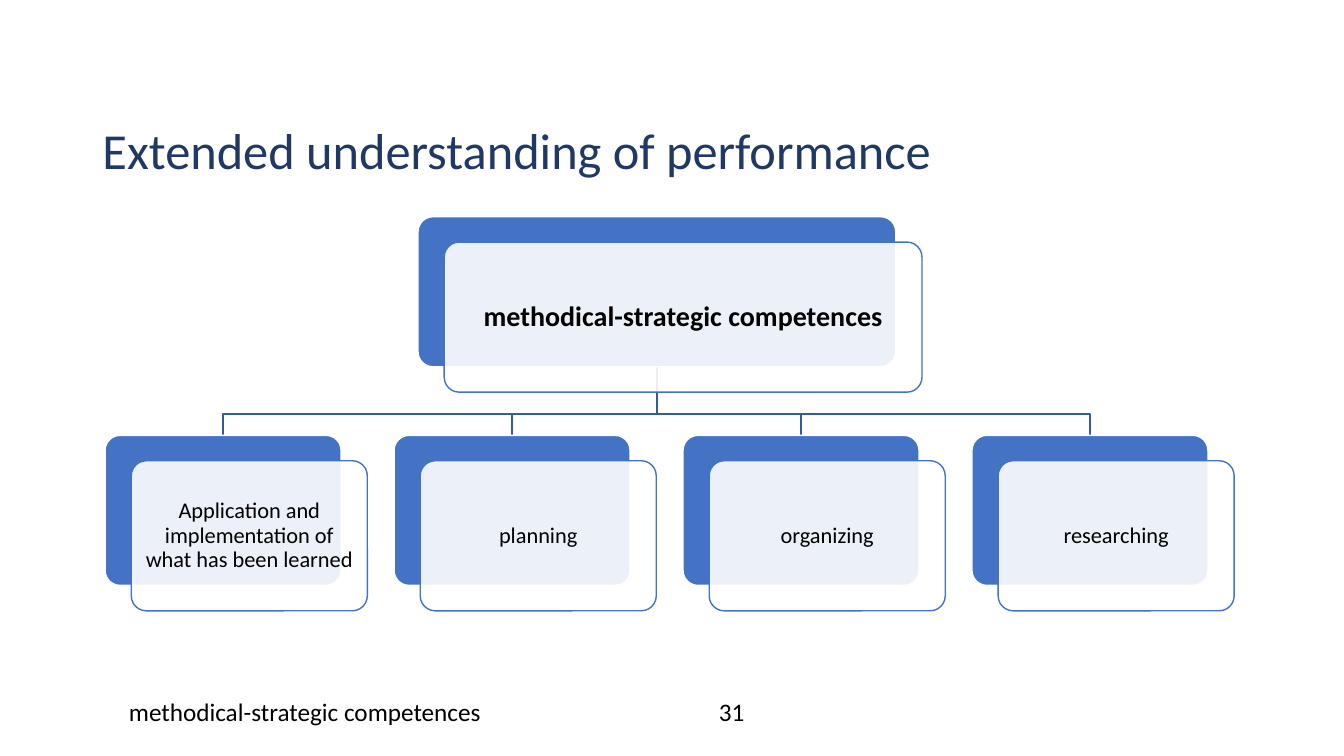
from lxml import etree
from pptx import Presentation
from pptx.dml.color import RGBColor
from pptx.enum import shapes, text
from pptx.oxml import ns
from pptx.util import Pt

COLORS = {"title": "203864", "box": "4472C4", "branch": "365B9D", "white": "FFFFFF", "black": "000000"}


def write(tf, content, size, color, align, bold=False):
    tf.word_wrap = True
    p = tf.paragraphs[0]
    p.text = content
    p.alignment = align
    p.font.name = "Calibri"
    p.font.size = Pt(size)
    p.font.bold = bold
    p.font.color.rgb = RGBColor.from_string(COLORS[color])
    return p


def add_card(s, left, top, width, label, size, bold, inset):
    for offset, fill, line in ((0, "box", "white"), (18.7, "white", "box")):
        sp = s.shapes.add_shape(shapes.MSO_SHAPE.ROUNDED_RECTANGLE,
                                Pt(left + offset), Pt(top + offset * 0.97), Pt(width), Pt(107.2))
        sp.adjustments[0] = 0.1
        sp.shadow.inherit = False
        sp.fill.solid()
        sp.fill.fore_color.rgb = RGBColor.from_string(COLORS[fill])
        sp.line.color.rgb = RGBColor.from_string(COLORS[line])
        sp.line.width = Pt(1)
    fill_color = sp._element.spPr.find(ns.qn("a:solidFill"))[0]
    etree.SubElement(fill_color, ns.qn("a:alpha"), val="90000")
    tf = sp.text_frame
    tf.margin_left = tf.margin_right = tf.margin_top = tf.margin_bottom = Pt(inset)
    tf.vertical_anchor = text.MSO_ANCHOR.MIDDLE
    p = write(tf, label, size, "black", text.PP_ALIGN.CENTER, bold)
    p.line_spacing = 0.9


prs = Presentation()
prs.slide_width, prs.slide_height = Pt(960), Pt(540)
s = prs.slides.add_slide(prs.slide_layouts[5])

title = s.shapes.title
title.left, title.top, title.width, title.height = Pt(66), Pt(86.4), Pt(828), Pt(69.8)
title.text_frame.vertical_anchor = text.MSO_ANCHOR.TOP
p = write(title.text_frame, "Extended understanding of performance", 36, "title", text.PP_ALIGN.LEFT)
p.line_spacing = 0.9

footers = [
    (85, 324, "methodical-strategic competences", text.PP_ALIGN.LEFT),
    (414.7, 216, "31", text.PP_ALIGN.CENTER),
]
for left, width, content, align in footers:
    sp = s.shapes.add_textbox(Pt(left), Pt(493.9), Pt(width), Pt(29))
    write(sp.text_frame, content, 18, "black", align)

parent_left, parent_top, parent_width = 298.6, 154.8, 341.3
child_left, child_top, child_width, pitch = 75.1, 311, 168.6, 206.4
labels = ["Application and implementation of what has been learned", "planning", "organizing", "researching"]
lefts = [child_left + i * pitch for i in range(len(labels))]

trunk_x = parent_left + parent_width / 2
for left in reversed(lefts):
    branch_x = left + child_width / 2
    branch = s.shapes.build_freeform(Pt(trunk_x), Pt(262))
    branch.add_line_segments([(Pt(trunk_x), Pt(295.7)), (Pt(branch_x), Pt(295.7)),
                              (Pt(branch_x), Pt(child_top))], close=False)
    sp = branch.convert_to_shape()
    sp.shadow.inherit = False
    sp.fill.background()
    sp.line.color.rgb = RGBColor.from_string(COLORS["branch"])
    sp.line.width = Pt(1)

add_card(s, parent_left, parent_top, parent_width, "methodical-strategic competences", 20, True, 6)
for left, label in zip(lefts, labels):
    add_card(s, left, child_top, child_width, label, 16, False, 5)

prs.save("out.pptx")
